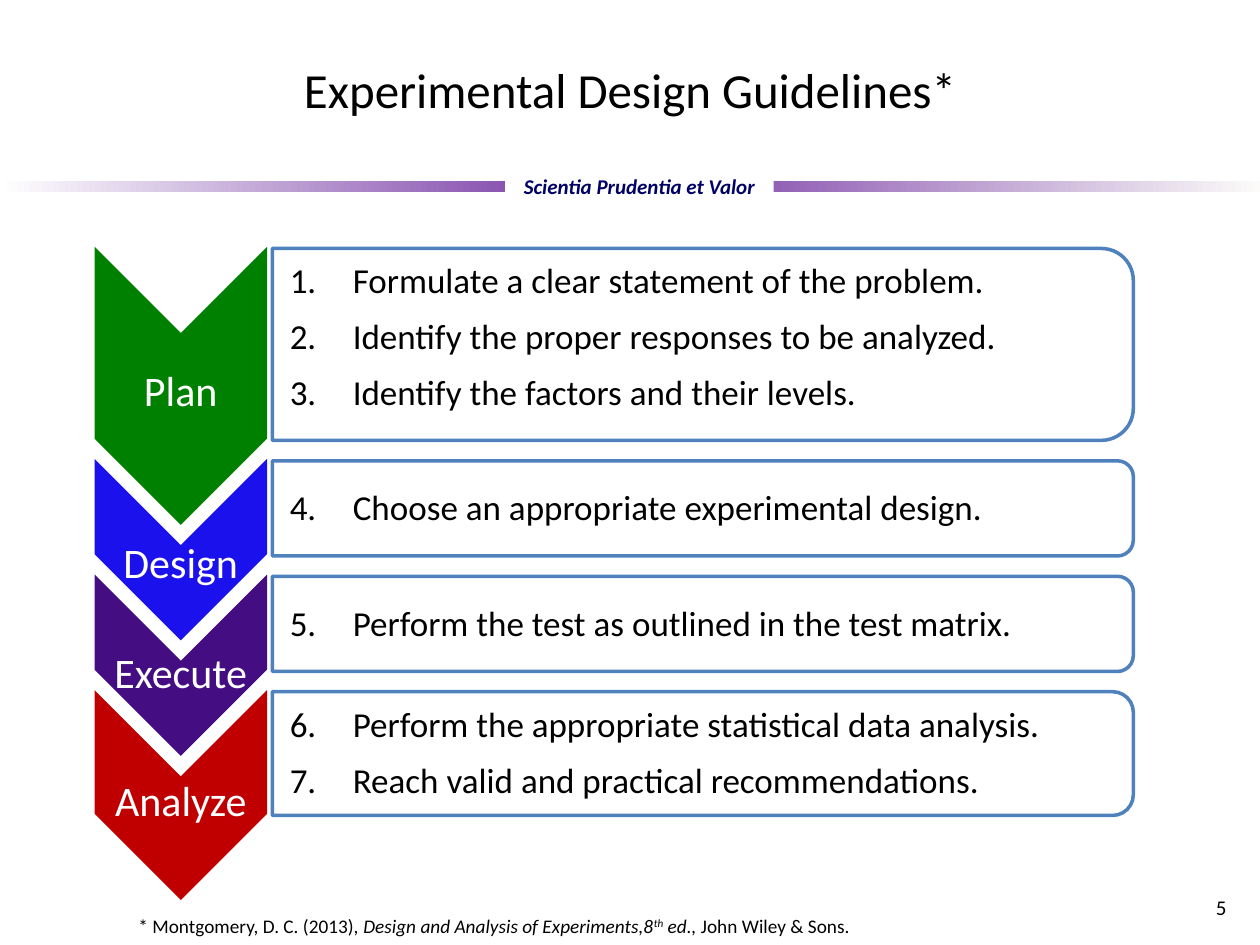
from copy import deepcopy

from lxml import etree
from pptx import Presentation
from pptx.dml.color import RGBColor
from pptx.enum.shapes import MSO_SHAPE
from pptx.enum.text import MSO_ANCHOR, PP_ALIGN
from pptx.oxml.ns import qn
from pptx.util import Pt

RECT, CHEVRON = MSO_SHAPE.RECTANGLE, MSO_SHAPE.CHEVRON
ROUND = MSO_SHAPE.ROUND_2_SAME_RECTANGLE
TOP, MIDDLE = MSO_ANCHOR.TOP, MSO_ANCHOR.MIDDLE
LEFT, CENTER, RIGHT = PP_ALIGN.LEFT, PP_ALIGN.CENTER, PP_ALIGN.RIGHT

FONT = "Calibri"
HEX = {
    "black": "000000", "white": "FFFFFF", "navy": "000066",
    "violet": "7030A0", "cream": "FCFBF9", "edge": "4F81BD",
    "green": "008000", "blue": "1B11ED", "purple": "440D81", "red": "C00000",
}
TITLE = "Experimental Design Guidelines*"
MOTTO = "Scientia Prudentia et Valor"
PAGE = "5"
# text, italic, raised
SOURCE = [
    ("* Montgomery, D. C. (2013), ", False, False),
    ("Design and Analysis of Experiments,8", True, False),
    ("th", True, True),
    (" ed., ", True, False),
    ("John Wiley & Sons.", False, False),
]
# name, colour, chevron length, label centre, text shift, steps
STAGES = [
    ("Plan", "green", 159, 224.6, -5, [
        "Formulate a clear statement of the problem.",
        "Identify the proper responses to be analyzed.",
        "Identify the factors and their levels."]),
    ("Design", "blue", 103.7, 322.6, -1, [
        "Choose an appropriate experimental design."]),
    ("Execute", "purple", 103.7, 385.9, -1, [
        "Perform the test as outlined in the test matrix."]),
    ("Analyze", "red", 120, 458.6, -1, [
        "Perform the appropriate statistical data analysis.",
        "Reach valid and practical recommendations."]),
]
ARROW_X, ARROW_W = 54, 98.6
START, GAP = 141, 11.6
DEPTH = ARROW_W / 2
BOX_X, BOX_W = 155.6, 492

deck = Presentation()
deck.slide_width, deck.slide_height = Pt(720), Pt(540)
slide = deck.slides.add_slide(deck.slide_layouts[6])


def rgb(name):
    return RGBColor.from_string(HEX[name])


def style(runs, size, color="black"):
    for run in runs:
        run.font.name, run.font.size = FONT, Pt(size)
        run.font.color.rgb = rgb(color)


def add_shape(kind, x, y, w, h, fill, line=None):
    shape = slide.shapes.add_shape(kind, Pt(x), Pt(y), Pt(w), Pt(h))
    shape.shadow.inherit = False
    shape.fill.solid()
    shape.fill.fore_color.rgb = rgb(fill)
    if line:
        shape.line.color.rgb = rgb(line)
        shape.line.width = Pt(2)
    else:
        shape.line.fill.background()
    return shape


def add_turned(kind, x, y, w, h, fill, line=None):
    """Add a shape turned a quarter right that then covers x, y, w, h."""
    shape = add_shape(kind, x + (w - h) / 2, y + (h - w) / 2, h, w, fill, line)
    shape.rotation = 90


def add_text(x, y, w, h, lines, size, color="black", align=LEFT,
             anchor=MIDDLE, pads=(7.2, 3.6, 7.2, 3.6), wrap=True):
    box = slide.shapes.add_textbox(Pt(x), Pt(y), Pt(w), Pt(h))
    frame = box.text_frame
    frame.word_wrap, frame.vertical_anchor = wrap, anchor
    (frame.margin_left, frame.margin_top,
     frame.margin_right, frame.margin_bottom) = map(Pt, pads)
    frame.text = "\n".join(lines)
    for para in frame.paragraphs:
        para.alignment = align
        style(para.runs, size, color)
    return frame


def number(frame, first):
    for i, para in enumerate(frame.paragraphs):
        if i:
            para.space_before = Pt(8)
        props = para._p.get_or_add_pPr()
        props.set("marL", str(Pt(36)))
        props.set("indent", str(-Pt(36)))
        mark = etree.SubElement(props, qn("a:buAutoNum"))
        mark.set("type", "arabicPeriod")
        mark.set("startAt", str(first))


def add_rule():
    rule = add_shape(RECT, 0, 103.7, 720, 5.8, "white")
    rule.fill.gradient()
    rule.fill.gradient_angle = 0
    stops = rule._element.spPr.find(".//" + qn("a:gsLst"))
    stops.insert(1, deepcopy(stops[0]))
    colors = [(0, "white"), (0.49, "violet"), (1, "cream")]
    for stop, (place, color) in zip(rule.fill.gradient_stops, colors):
        stop.position, stop.color.rgb = place, rgb(color)


def add_stages():
    top, first = START, 1
    for name, color, length, label, shift, steps in STAGES:
        tall = length - DEPTH
        add_turned(CHEVRON, ARROW_X, top, ARROW_W, length, color)
        add_text(ARROW_X, label - 20, ARROW_W, 40, [name], 24, "white",
                 CENTER, pads=(1.4,) * 4).paragraphs[0].line_spacing = 0.9
        add_turned(ROUND, BOX_X, top + 1, BOX_W, tall, "white", "edge")
        frame = add_text(BOX_X + 2, top + 1 + shift, BOX_W - 2, tall,
                         steps, 20, pads=(8, 0.7, 0.7, 0.7))
        number(frame, first)
        first += len(steps)
        top += tall + GAP


def add_source():
    para = add_text(72, 519, 576, 21, [""], 11, anchor=TOP).paragraphs[0]
    for words, italic, raised in SOURCE:
        run = para.add_run()
        run.text, run.font.italic = words, italic
        if raised:
            run._r.get_or_add_rPr().set("baseline", "30000")
    style(para.runs, 11)


add_rule()
add_shape(RECT, 288.7, 95.8, 153.4, 21, "white")
motto = add_text(288.7, 95.8, 153.4, 21, [MOTTO], 12, "navy", CENTER,
                 TOP, wrap=False)
font = motto.paragraphs[0].runs[0].font
font.bold = font.italic = True
add_text(96, 6, 528, 90, [TITLE], 28, align=CENTER)
add_stages()
add_source()
add_text(684, 504, 24, 29, [PAGE], 12, align=RIGHT)

deck.save("out.pptx")
